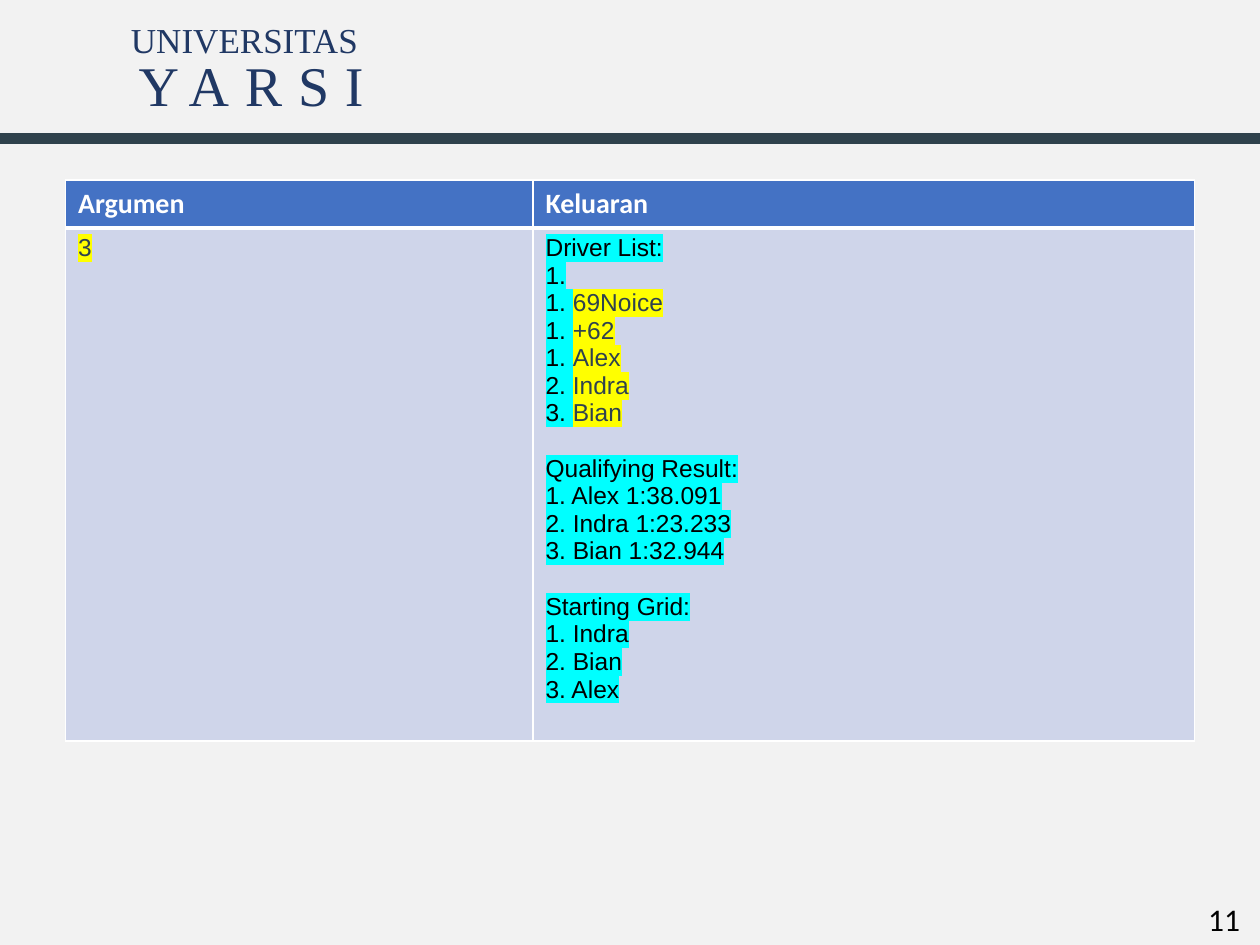
"""Build the slide showing the program argument and its expected output."""
from lxml.etree import SubElement
from pptx import Presentation
from pptx.dml.color import RGBColor
from pptx.enum.shapes import MSO_CONNECTOR as Connector
from pptx.enum.text import PP_ALIGN as Align
from pptx.oxml.ns import qn
from pptx.util import Inches, Pt

COLORS = {"page": "F2F2F2", "navy": "203864", "rule": "2F424C", "input": "2F424F",
          "header": "4472C4", "body": "CFD5EA", "white": "FFFFFF", "black": "000000",
          "yellow": "FFFF00", "cyan": "00FFFF"}
STYLES = {
    "number": {"size": 18, "name": "Calibri", "color": "black"},
    "brand": {"size": 20, "name": "Times New Roman", "color": "navy"},
    "brand_wide": {"size": 32, "name": "Times New Roman", "color": "navy", "spacing": 9},
    "header": {"size": 16, "name": "Calibri", "color": "white", "bold": True},
    "input": {"size": 14, "name": "Arial", "color": "input", "mark": "yellow"},
    "output": {"size": 14, "name": "Arial", "color": "black", "mark": "cyan"},
}
LABELS = [
    ("11", "number", (9.49, 7.09, 0.5, 0.4), Align.LEFT),
    ("UNIVERSITAS", "brand", (0.93, 0.1, 2.02, 0.44), Align.CENTER),
    ("YARSI", "brand_wide", (0.93, 0.35, 2.13, 0.64), Align.CENTER),
]
HEADINGS = ["Argumen", "Keluaran"]
ARGUMENT = [[("3", "input")]]
SECTIONS = [
    ("Driver List:", [("1.", ""), ("1. ", "69Noice"), ("1. ", "+62"), ("1. ", "Alex"),
                      ("2. ", "Indra"), ("3. ", "Bian")]),
    ("Qualifying Result:", [("1. Alex 1:38.091", ""), ("2. Indra 1:23.233", ""),
                            ("3. Bian 1:32.944", "")]),
    ("Starting Grid:", [("1. Indra", ""), ("2. Bian", ""), ("3. Alex", "")]),
]
COLUMNS, ROWS = [3.71, 5.25], [0.38, 4.07]
TABLE_LEFT, TABLE_TOP = 0.52, 1.43
RULE_Y, SECTION_GAP = 1.1, 16


def rgb(color):
    return RGBColor.from_string(COLORS[color])


def add_color(parent, color):
    SubElement(parent, qn("a:srgbClr"), val=COLORS[color])


def add_span(para, text, style):
    span = para.add_run()
    span.text = text
    look = STYLES[style]
    values = {"size": Pt(look["size"]), "name": look["name"], "bold": look.get("bold", False)}
    for key, value in values.items():
        setattr(span.font, key, value)
    span.font.color.rgb = rgb(look["color"])
    props = span.font._element
    if "spacing" in look:
        props.set("spc", str(look["spacing"] * 100))
    if "mark" in look:
        mark = SubElement(props, qn("a:highlight"))
        add_color(mark, look["mark"])
        props.find(qn("a:latin")).addprevious(mark)


def add_lines(frame, lines, gaps=()):
    for index, spans in enumerate(lines):
        para = frame.add_paragraph() if index else frame.paragraphs[0]
        if index in gaps:
            para.space_before = Pt(SECTION_GAP)
        for text, style in spans:
            add_span(para, text, style)


def format_cell(cell, fill, bottom):
    cell.fill.solid()
    cell.fill.fore_color.rgb = rgb(fill)
    props = cell._tc.get_or_add_tcPr()
    for index, (side, width) in enumerate(zip("LRTB", (1, 1, bottom if fill == "body" else 1, bottom))):
        edge = SubElement(props, qn(f"a:ln{side}"), w=str(Pt(width)))
        add_color(SubElement(edge, qn("a:solidFill")), "white")
        props.insert(index, edge)


def output_lines():
    lines, gaps = [], []
    for title, items in SECTIONS:
        if lines:
            gaps.append(len(lines))
        lines.append([(title, "output")])
        for label, name in items:
            lines.append([(label, "output")] + ([(name, "input")] if name else []))
    return lines, gaps


def add_results(page):
    area = map(Inches, (TABLE_LEFT, TABLE_TOP, sum(COLUMNS), sum(ROWS)))
    table = page.shapes.add_table(len(ROWS), len(COLUMNS), *area).table
    table.horz_banding = False
    for column, width in zip(table.columns, COLUMNS):
        column.width = Inches(width)
    for row, height in zip(table.rows, ROWS):
        row.height = Inches(height)
    lines, gaps = output_lines()
    body = [(ARGUMENT, ()), (lines, gaps)]
    for index, (heading, content) in enumerate(zip(HEADINGS, body)):
        head, cell = table.cell(0, index), table.cell(1, index)
        add_lines(head.text_frame, [[(heading, "header")]])
        add_lines(cell.text_frame, *content)
        format_cell(head, "header", 3)
        format_cell(cell, "body", 1)
        for edge in cell._tc.tcPr.findall(qn("a:lnT")):
            edge.set("w", str(Pt(3)))


def main():
    deck = Presentation()
    deck.slide_width, deck.slide_height = Inches(10), Inches(7.5)
    page = deck.slides.add_slide(deck.slide_layouts[6])
    page.background.fill.solid()
    page.background.fill.fore_color.rgb = rgb("page")
    for text, style, area, align in LABELS:
        frame = page.shapes.add_textbox(*map(Inches, area)).text_frame
        frame.word_wrap = False
        add_lines(frame, [[(text, style)]])
        frame.paragraphs[0].alignment = align
    rule = page.shapes.add_connector(Connector.STRAIGHT, 0, Inches(RULE_Y),
                                     deck.slide_width, Inches(RULE_Y))
    rule.line.color.rgb = rgb("rule")
    rule.line.width = Pt(6)
    SubElement(rule._element.spPr, qn("a:effectLst"))
    add_results(page)
    deck.save("out.pptx")


if __name__ == "__main__":
    main()
